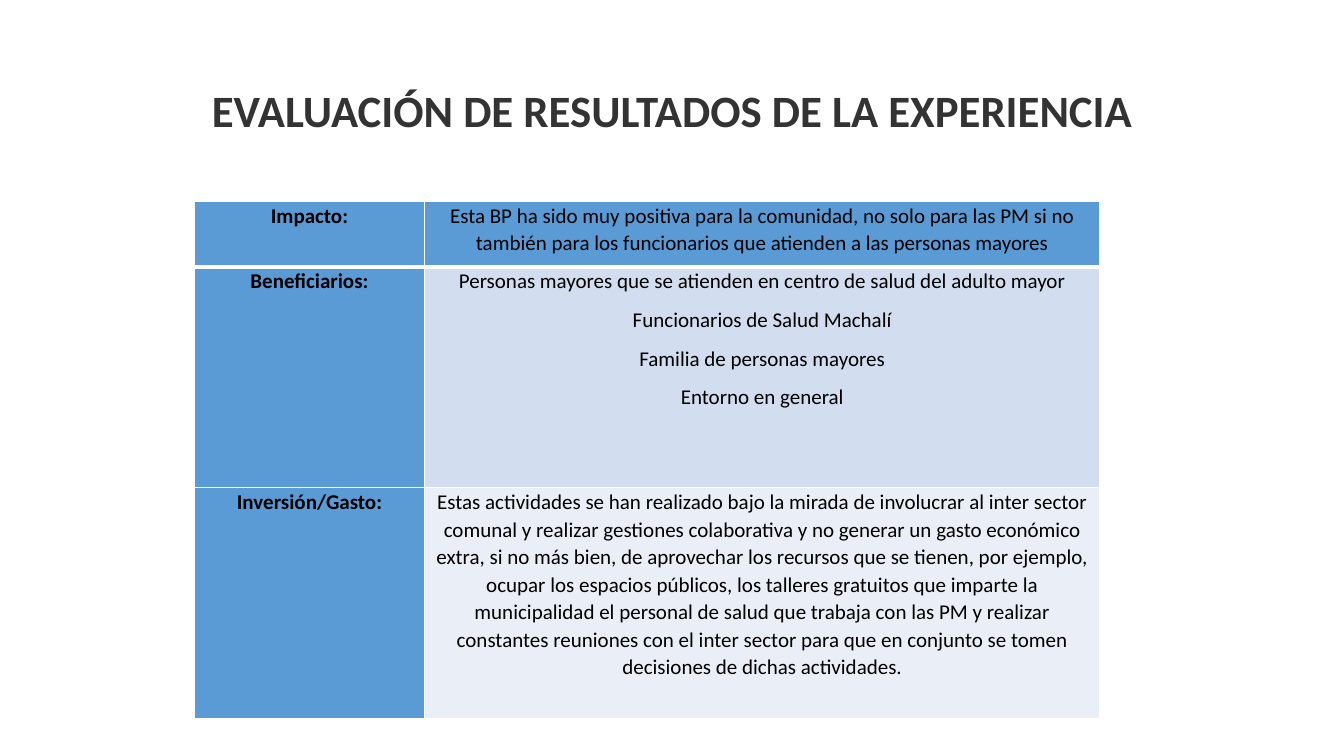
from lxml.etree import SubElement
from pptx import Presentation
from pptx.dml.color import RGBColor
from pptx.enum.text import MSO_ANCHOR, PP_ALIGN
from pptx.oxml.ns import qn
from pptx.util import Inches, Pt

BLACK = RGBColor(0x00, 0x00, 0x00)
DARK = RGBColor(0x33, 0x33, 0x33)
WHITE = RGBColor(0xFF, 0xFF, 0xFF)
BLUE = RGBColor(0x5B, 0x9B, 0xD5)
LIGHT = RGBColor(0xD2, 0xDE, 0xEF)
PALE = RGBColor(0xEA, 0xEF, 0xF7)


def write(tf, text, size=15, color=BLACK, bold=False, spacing=1.07, after=8):
    """Write one centred paragraph per line of text."""
    tf.word_wrap = True
    for i, line in enumerate(text.split("\n")):
        p = tf.add_paragraph() if i else tf.paragraphs[0]
        p.alignment = PP_ALIGN.CENTER
        p.line_spacing = spacing
        p.space_after = Pt(after)
        r = p.add_run()
        r.text = line
        r.font.name = "Calibri"
        r.font.size = Pt(size)
        r.font.bold = bold
        r.font.color.rgb = color


def set_borders(cell, **widths):
    """Draw white cell borders; widths in points, keyed L, R, T, B."""
    tcPr = cell._tc.get_or_add_tcPr()
    for i, (side, width) in enumerate(widths.items()):
        ln = SubElement(tcPr, qn(f"a:ln{side}"), w=str(Pt(width)))
        fill = SubElement(ln, qn("a:solidFill"))
        SubElement(fill, qn("a:srgbClr"), val=str(WHITE))
        tcPr.insert(i, ln)


prs = Presentation()
prs.slide_width, prs.slide_height = Inches(13.33), Inches(7.5)
s = prs.slides.add_slide(prs.slide_layouts[6])

# Title
title = s.shapes.add_textbox(Inches(0.92), Inches(0.4), Inches(11.5), Inches(1.45))
title.text_frame.vertical_anchor = MSO_ANCHOR.MIDDLE
write(title.text_frame, "EVALUACIÓN DE RESULTADOS DE LA EXPERIENCIA",
      size=32, color=DARK, bold=True, spacing=0.9, after=0)

# Results: label, text, fill of the text cell, row height
results = [
    ("Impacto:",
     "Esta BP ha sido muy positiva para la comunidad, no solo para las PM si no "
     "también para los funcionarios que atienden a las personas mayores",
     BLUE, 0.65),
    ("Beneficiarios:",
     "Personas mayores que se atienden en centro de salud del adulto mayor\n"
     "Funcionarios de Salud Machalí\n"
     "Familia de personas mayores\n"
     "Entorno en general",
     LIGHT, 2.19),
    ("Inversión/Gasto:",
     "Estas actividades se han realizado bajo la mirada de involucrar al inter sector "
     "comunal y realizar gestiones colaborativa y no generar un gasto económico extra, "
     "si no más bien, de aprovechar los recursos que se tienen, por ejemplo, ocupar los "
     "espacios públicos, los talleres gratuitos que imparte la municipalidad el personal "
     "de salud que trabaja con las PM y realizar constantes reuniones con el inter sector "
     "para que en conjunto se tomen decisiones de dichas actividades.",
     PALE, 2.29),
]

# Table
table = s.shapes.add_table(len(results), 2, Inches(1.93), Inches(2),
                           Inches(8.98), Inches(5.13)).table
table.horz_banding = False
table.first_col = True
for column, width in zip(table.columns, (2.28, 6.7)):
    column.width = Inches(width)

for i, (label, text, text_fill, height) in enumerate(results):
    table.rows[i].height = Inches(height)
    for j, (content, fill) in enumerate([(label, BLUE), (text, text_fill)]):
        cell = table.cell(i, j)
        cell.margin_left = cell.margin_right = Inches(0.07)
        cell.margin_top = cell.margin_bottom = 0
        cell.fill.solid()
        cell.fill.fore_color.rgb = fill
        # A thick line parts the first row from the rest
        set_borders(cell, L=1, R=1, T=3 if i == 1 else 1, B=3 if i == 0 else 1)
        write(cell.text_frame, content, bold=j == 0)

prs.save("out.pptx")
